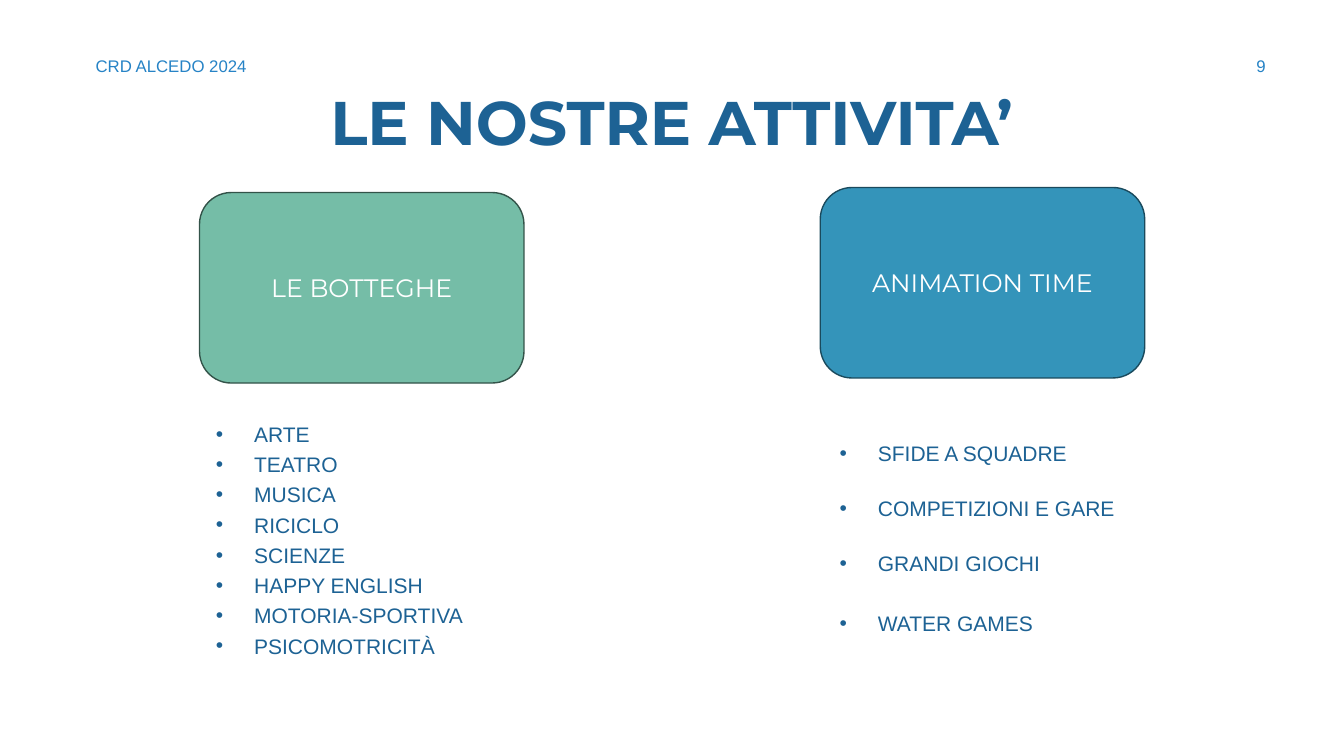
from lxml.etree import SubElement
from pptx import Presentation
from pptx.dml.color import RGBColor
from pptx.enum.shapes import MSO_SHAPE as Shape
from pptx.enum.text import MSO_ANCHOR as Anchor, PP_ALIGN as Align
from pptx.oxml.ns import qn
from pptx.util import Pt

COLORS = {
    "title": "1D6294", "header": "2683C6", "label": "FFFFFF",
    "green": "75BDA7", "green_line": "335349",
    "blue": "3494BA", "blue_line": "1A4A5D",
}

# Content: text, box (left, top, width, height), font, size, colour, bold, align
HEADINGS = [
    ("CRD ALCEDO 2024", (61.2, 36, 252, 21.6), "Arial", 12, "header", False, Align.LEFT),
    ("9", (861.8, 36, 77.8, 21.6), "Arial", 12, "header", False, Align.CENTER),
    ("LE NOSTRE ATTIVITA’", (59.8, 56.2, 840.2, 60.5), "Montserrat", 44, "title", True, Align.CENTER),
]
# Each list item carries the space before it
ACTIVITIES = [
    {"label": "LE BOTTEGHE", "color": "green", "card": (142.5, 137.5),
     "list": (147.1, 297.4, 218.2, 186.5),
     "items": [(name, 3.6) for name in (
         "ARTE", "TEATRO", "MUSICA", "RICICLO", "SCIENZE",
         "HAPPY ENGLISH", "MOTORIA-SPORTIVA", "PSICOMOTRICITÀ")]},
    {"label": "ANIMATION TIME", "color": "blue", "card": (585.9, 133.9),
     "list": (592.6, 311, 218.2, 159.1),
     "items": [("SFIDE A SQUADRE", 3.6), ("COMPETIZIONI E GARE", 21.5),
               ("GRANDI GIOCHI", 21.5), ("WATER GAMES", 24.5)]},
]
CARD_SIZE = (231.8, 136.1)
INDENT = 27.4


def rgb(name):
    return RGBColor.from_string(COLORS[name])


def add_run(paragraph, text, font, size, color, bold=False):
    run = paragraph.add_run()
    run.text = text
    run.font.name = font
    run.font.size = Pt(size)
    run.font.bold = bold
    run.font.color.rgb = rgb(color)


def add_text_box(slide, box, anchor):
    frame = slide.shapes.add_textbox(*map(Pt, box)).text_frame
    frame.word_wrap = True
    frame.vertical_anchor = anchor
    return frame


def add_card(slide, label, position, color):
    card = slide.shapes.add_shape(Shape.ROUNDED_RECTANGLE, *map(Pt, position + CARD_SIZE))
    card.shadow.inherit = False
    card.fill.solid()
    card.fill.fore_color.rgb = rgb(color)
    card.line.color.rgb = rgb(color + "_line")
    card.line.width = Pt(1)
    card.text_frame.vertical_anchor = Anchor.MIDDLE
    paragraph = card.text_frame.paragraphs[0]
    paragraph.alignment = Align.CENTER
    add_run(paragraph, label, "Montserrat", 18, "label")


def add_list(slide, box, items):
    frame = add_text_box(slide, box, Anchor.TOP)
    for index, (text, space) in enumerate(items):
        paragraph = frame.add_paragraph() if index else frame.paragraphs[0]
        paragraph.space_before = Pt(space)
        properties = paragraph._p.get_or_add_pPr()
        properties.set("marL", str(Pt(INDENT)))
        properties.set("indent", str(-Pt(INDENT)))
        SubElement(properties, qn("a:buFont"), typeface="Arial")
        SubElement(properties, qn("a:buChar"), char="•")
        add_run(paragraph, text, "Arial", 15, "title")


presentation = Presentation()
presentation.slide_width, presentation.slide_height = Pt(960), Pt(540)
slide = presentation.slides.add_slide(presentation.slide_layouts[6])

# Header line and title
for text, box, font, size, color, bold, align in HEADINGS:
    paragraph = add_text_box(slide, box, Anchor.MIDDLE).paragraphs[0]
    paragraph.alignment = align
    add_run(paragraph, text, font, size, color, bold)

# Activity cards with their lists
for activity in ACTIVITIES:
    add_card(slide, activity["label"], activity["card"], activity["color"])
    add_list(slide, activity["list"], activity["items"])

presentation.save("out.pptx")
